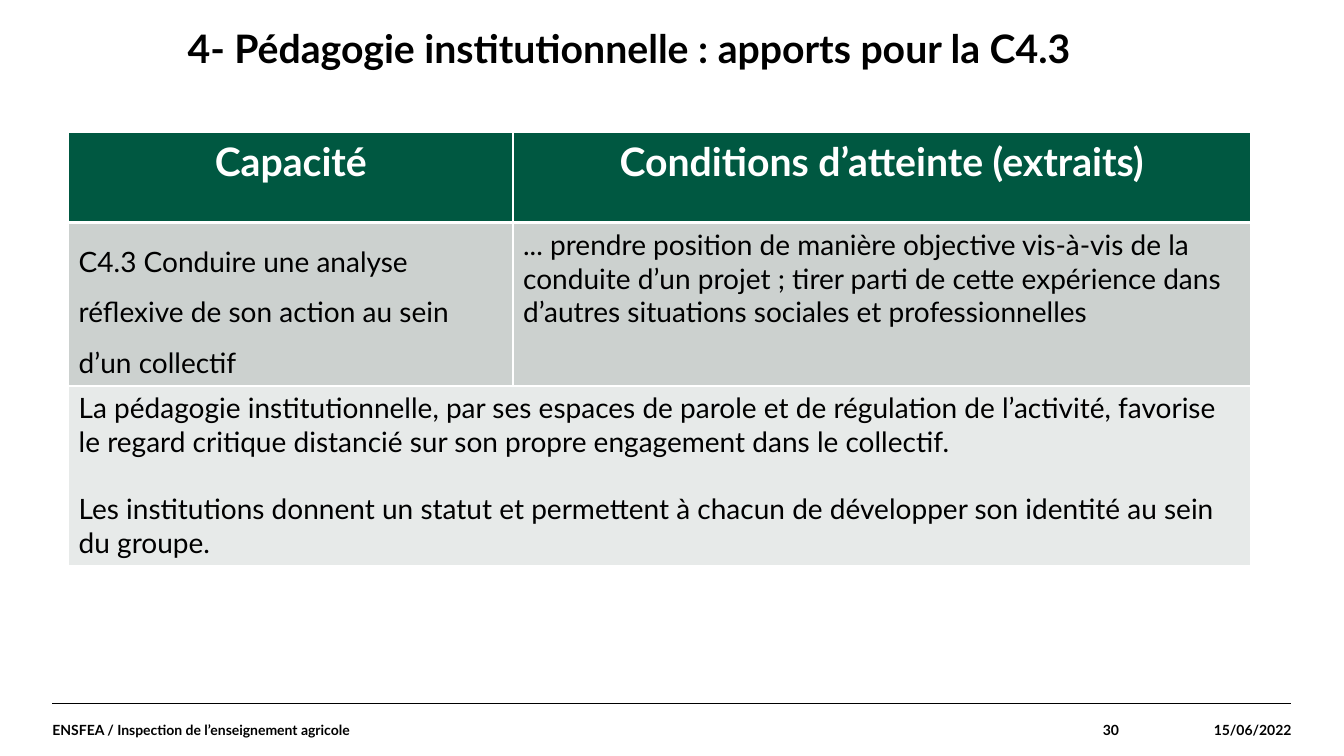
from lxml import etree
from pptx import Presentation
from pptx.dml.color import RGBColor
from pptx.enum.shapes import MSO_CONNECTOR
from pptx.enum.text import MSO_ANCHOR, MSO_AUTO_SIZE, PP_ALIGN
from pptx.oxml.ns import qn
from pptx.util import Pt

LEFT, CENTER, RIGHT = PP_ALIGN.LEFT, PP_ALIGN.CENTER, PP_ALIGN.RIGHT
TOP, MIDDLE = MSO_ANCHOR.TOP, MSO_ANCHOR.MIDDLE
BLACK = RGBColor(0x00, 0x00, 0x00)
WHITE = RGBColor(0xFF, 0xFF, 0xFF)
GREEN = RGBColor(0x00, 0x58, 0x41)
GREY = RGBColor(0xCC, 0xD1, 0xCF)
PALE_GREY = RGBColor(0xE7, 0xEA, 0xE9)


def write(frame, text, size=20, color=BLACK, bold=False, align=LEFT,
          spacing=1.0, gap=0, anchor=TOP, margin=None):
    frame.word_wrap = True
    frame.vertical_anchor = anchor
    if margin is not None:
        frame.margin_left = frame.margin_right = Pt(margin)
        frame.margin_top = frame.margin_bottom = Pt(margin)
    for index, line in enumerate(text.split("\n")):
        paragraph = frame.add_paragraph() if index else frame.paragraphs[0]
        paragraph.alignment = align
        paragraph.line_spacing = spacing
        paragraph.space_before = Pt(gap if index else 0)
        run = paragraph.add_run()
        run.text = line
        run.font.name = "Lato"
        run.font.size = Pt(size)
        run.font.bold = bold
        run.font.color.rgb = color


def add_border(cell, side, width):
    edge = etree.SubElement(cell._tc.get_or_add_tcPr(), qn(f"a:ln{side}"), w=str(Pt(width)))
    fill = etree.SubElement(edge, qn("a:solidFill"))
    etree.SubElement(fill, qn("a:srgbClr"), val=str(WHITE))


prs = Presentation()
prs.slide_width, prs.slide_height = Pt(960), Pt(540)
slide = prs.slides.add_slide(prs.slide_layouts[5])

title = slide.shapes.title
title.left, title.top, title.width, title.height = Pt(134), Pt(21), Pt(775), Pt(47)
title.text_frame.auto_size = MSO_AUTO_SIZE.NONE
write(title.text_frame, "4- Pédagogie institutionnelle : apports pour la C4.3",
      size=28, bold=True, spacing=0.9, margin=0)

footer_rule = slide.shapes.add_connector(
    MSO_CONNECTOR.STRAIGHT, Pt(37.5), Pt(502.5), Pt(922.5), Pt(502.5))
footer_rule.line.color.rgb = BLACK
footer_rule.line.width = Pt(0.8)
etree.SubElement(footer_rule._element.spPr, qn("a:effectLst"))

footer_items = [
    ("ENSFEA / Inspection de l’enseignement agricole", 37.5, 620, LEFT),
    ("30", 657.5, 141.75, RIGHT),
    ("15/06/2022", 799.25, 123.25, RIGHT),
]
for text, left, width, align in footer_items:
    footer = slide.shapes.add_textbox(Pt(left), Pt(502.5), Pt(width), Pt(37.5))
    write(footer.text_frame, text, size=10, bold=True, align=align, anchor=MIDDLE, margin=0)

column_widths = [317.5, 526.5]
row_heights = [64.5, 116.75, 128]
capacity_table = slide.shapes.add_table(
    3, 2, Pt(49), Pt(94.5), Pt(sum(column_widths)), Pt(sum(row_heights))).table
for column, width in zip(capacity_table.columns, column_widths):
    column.width = Pt(width)
for row, height in zip(capacity_table.rows, row_heights):
    row.height = Pt(height)

for row_index, row_fill in enumerate([GREEN, GREY, PALE_GREY]):
    for cell in capacity_table.rows[row_index].cells:
        for side in "LRTB":
            header_edge = (row_index, side) in [(0, "B"), (1, "T")]
            add_border(cell, side, 3 if header_edge else 1)
        cell.fill.solid()
        cell.fill.fore_color.rgb = row_fill
capacity_table.cell(2, 0).merge(capacity_table.cell(2, 1))

for column_index, heading in enumerate(["Capacité", "Conditions d’atteinte (extraits)"]):
    write(capacity_table.cell(0, column_index).text_frame, heading,
          size=28, color=WHITE, bold=True, align=CENTER)
write(capacity_table.cell(1, 0).text_frame,
      "C4.3 Conduire une analyse réflexive de son action au sein d’un collectif", spacing=1.5)
write(capacity_table.cell(1, 1).text_frame,
      "... prendre position de manière objective vis-à-vis de la conduite d’un projet ; "
      "tirer parti de cette expérience dans d’autres situations sociales et professionnelles")
write(capacity_table.cell(2, 0).text_frame,
      "La pédagogie institutionnelle, par ses espaces de parole et de régulation de l’activité, "
      "favorise le regard critique distancié sur son propre engagement dans le collectif.\n"
      "Les institutions donnent un statut et permettent à chacun de développer son identité "
      "au sein du groupe.", gap=24)

prs.save("out.pptx")
